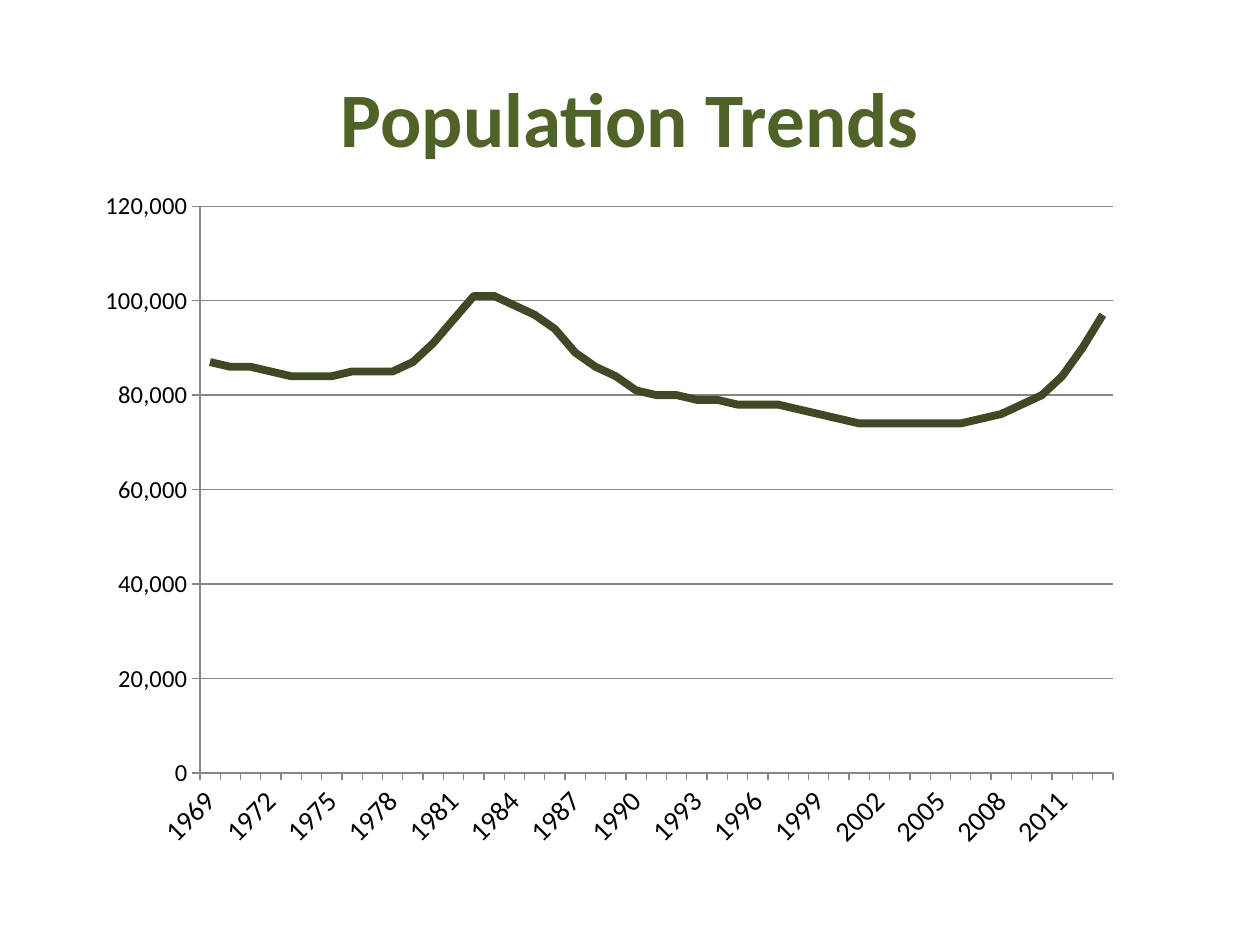
from dataclasses import dataclass

from lxml import etree
from pptx import Presentation
from pptx.chart.data import CategoryChartData
from pptx.dml.color import RGBColor
from pptx.enum.chart import XL_CHART_TYPE as Kind, XL_TICK_MARK as Tick
from pptx.enum.text import MSO_ANCHOR as Anchor, PP_ALIGN as Align
from pptx.oxml.ns import qn
from pptx.util import Inches, Pt


@dataclass(frozen=True)
class Theme:
    font = "Calibri"
    title = RGBColor(0x4F, 0x62, 0x28)
    trend = RGBColor(0x3F, 0x49, 0x26)
    text = RGBColor(0, 0, 0)
    grid = RGBColor(0x87, 0x87, 0x87)
    title_size = Pt(44)
    year_size = Pt(16)
    count_size = Pt(14)
    base_size = Pt(10)


theme = Theme()
start = 1969
# Population in thousands, one value a year
people = [
    87, 86, 86, 85, 84, 84, 84, 85, 85, 85, 87, 91, 96, 101, 101,
    99, 97, 94, 89, 86, 84, 81, 80, 80, 79, 79, 78, 78, 78, 77,
    76, 75, 74, 74, 74, 74, 74, 74, 75, 76, 78, 80, 84, 90, 97,
]

deck = Presentation()
deck.slide_width, deck.slide_height = Inches(10), Inches(7.5)
slide = deck.slides.add_slide(deck.slide_layouts[6])

# Title
box = slide.shapes.add_textbox(Inches(0.5), Inches(0.3), Inches(9), Inches(1.25))
frame = box.text_frame
frame.word_wrap = True
frame.vertical_anchor = Anchor.MIDDLE
para = frame.paragraphs[0]
para.text = "Population Trends"
para.alignment = Align.CENTER
para.font.name = theme.font
para.font.size = theme.title_size
para.font.bold = True
para.font.color.rgb = theme.title

# Line chart
data = CategoryChartData()
data.categories = [str(start + i) for i in range(len(people))]
data.add_series("Series 1", [n * 1000 for n in people])
chart = slide.shapes.add_chart(
    Kind.LINE, Inches(0.67), Inches(1.42), Inches(8.33), Inches(5.42), data
).chart
chart.has_legend = False
chart.has_title = False
chart.font.name = theme.font
chart.font.size = theme.base_size
chart.font.color.rgb = theme.text

plot = chart.plots[0]
plot.vary_by_categories = False
trend = plot.series[0]
trend.smooth = False
trend.format.line.color.rgb = theme.trend
trend.format.line.width = Pt(4.5)

# Axes
years, counts = chart.category_axis, chart.value_axis
for axis, size in ((years, theme.year_size), (counts, theme.count_size)):
    axis.major_tick_mark = Tick.OUTSIDE
    axis.minor_tick_mark = Tick.NONE
    axis.format.line.color.rgb = theme.grid
    font = axis.tick_labels.font
    font.name = theme.font
    font.size = size
    font.color.rgb = theme.text

counts.minimum_scale, counts.maximum_scale = 0, 120000
counts.major_unit = 20000
counts.has_major_gridlines = True
counts.major_gridlines.format.line.color.rgb = theme.grid
counts.tick_labels.number_format = r"#,##0;\-#,##0"
counts.tick_labels.number_format_is_linked = False

# Slanted labels, one for every third year
body = years._element.find(qn("c:txPr")).find(qn("a:bodyPr"))
body.set("rot", "-2700000")
body.set("vert", "horz")
skip = etree.Element(qn("c:tickLblSkip"), val="3")
years._element.find(qn("c:noMultiLvlLbl")).addprevious(skip)

# Fixed inner plot area, as shares of the chart
area = chart._chartSpace.chart.plotArea
for old in area.findall(qn("c:layout")):
    area.remove(old)
layout = etree.Element(qn("c:layout"))
area.insert(0, layout)
manual = etree.SubElement(layout, qn("c:manualLayout"))
places = {
    "layoutTarget": "inner", "xMode": "edge", "yMode": "edge",
    "x": "0.11", "y": "0.04", "w": "0.87", "h": "0.83",
}
for tag, val in places.items():
    etree.SubElement(manual, qn(f"c:{tag}"), val=val)

deck.save("out.pptx")
